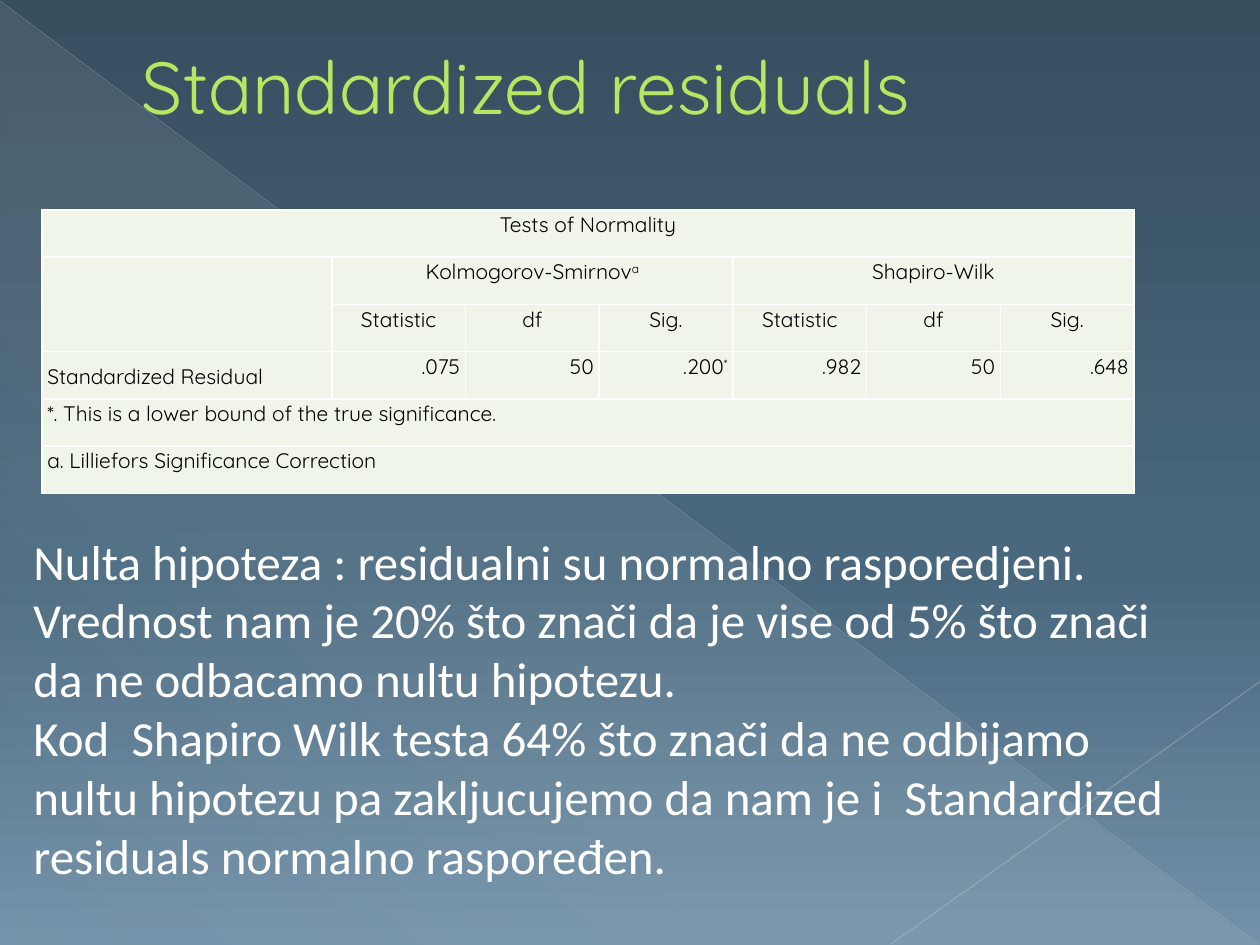
import pptx
import pptx.dml.color
import pptx.enum.shapes
import pptx.enum.text
import pptx.oxml
import pptx.oxml.ns
import pptx.util
from lxml import etree

Pt = pptx.util.Pt
ALIGN = pptx.enum.text.PP_ALIGN
ANCHOR = pptx.enum.text.MSO_ANCHOR
qn = pptx.oxml.ns.qn

COLORS = {
    "sky_top": "374E5F", "sky_middle": "49687E", "sky_bottom": "7291A8",
    "sheen": "E7ECED", "long_line": "BAC0C6", "short_line": "C2C7CC",
    "title": "B4E862", "title_edge": "698A18", "body": "FFFFFF",
    "cell": "EFF5E8", "border": "FFFFFF", "cell_text": "000000",
}
LEFT, CENTER, RIGHT = ALIGN.LEFT, ALIGN.CENTER, ALIGN.RIGHT

# Row, column, rows spanned, columns spanned, alignment, text, superscript
HEADINGS = ["Statistic", "df", "Sig."] * 2
RESULTS = [(".075", ""), ("50", ""), (".200", "*"),
           (".982", ""), ("50", ""), (".648", "")]
NORMALITY_CELLS = [
    (0, 0, 1, 7, CENTER, "Tests of Normality", ""),
    (1, 0, 2, 1, LEFT, "", ""),
    (1, 1, 1, 3, CENTER, "Kolmogorov-Smirnov", "a"),
    (1, 4, 1, 3, CENTER, "Shapiro-Wilk", ""),
    *[(2, col, 1, 1, CENTER, text, "") for col, text in enumerate(HEADINGS, 1)],
    (3, 0, 1, 1, LEFT, "Standardized Residual", ""),
    *[(3, col, 1, 1, RIGHT, *result) for col, result in enumerate(RESULTS, 1)],
    (4, 0, 1, 7, LEFT, "*. This is a lower bound of the true significance.", ""),
    (5, 0, 1, 7, LEFT, "a. Lilliefors Significance Correction", ""),
]
CONCLUSIONS = [
    "Nulta hipoteza : residualni su normalno rasporedjeni.",
    "Vrednost nam je 20% što znači da je vise od 5% što znači "
    "da ne odbacamo nultu hipotezu.",
    "Kod  Shapiro Wilk testa 64% što znači da ne odbijamo nultu hipotezu "
    "pa zakljucujemo da nam je i  Standardized residuals normalno raspoređen.",
]


def rgb(name):
    return pptx.dml.color.RGBColor.from_string(COLORS[name])


def color_fill(parent, name, opacity=100):
    color = etree.SubElement(parent, qn("a:srgbClr"), val=COLORS[name])
    if opacity < 100:
        etree.SubElement(color, qn("a:alpha"), val=str(opacity * 1000))


def solid_line(parent, tag, name, width):
    line = etree.SubElement(parent, qn(tag), w=str(Pt(width)))
    color_fill(etree.SubElement(line, qn("a:solidFill")), name)
    return line


def set_gradient(fill, owner, stops, angle):
    """Swap the owner's solid fill for a linear gradient."""
    fill.solid()
    solid = next(owner.iter(qn("a:solidFill")))
    gradient = etree.Element(qn("a:gradFill"), rotWithShape="1")
    stop_list = etree.SubElement(gradient, qn("a:gsLst"))
    for position, name, opacity in stops:
        stop = etree.SubElement(stop_list, qn("a:gs"), pos=str(position * 1000))
        color_fill(stop, name, opacity)
    etree.SubElement(gradient, qn("a:lin"), ang=str(angle * 60000), scaled="0")
    solid.getparent().replace(solid, gradient)


def style_run(run, font, size, color):
    run.font.name = font
    run.font.size = Pt(size)
    run.font.color.rgb = rgb(color)


def add_line(slide, start, end, color, width, opacity):
    line = slide.shapes.add_connector(
        pptx.enum.shapes.MSO_CONNECTOR.STRAIGHT, *map(Pt, start + end))
    line.line.width = Pt(width)
    line.line.color.rgb = rgb(color)
    properties = line._element.spPr
    tint = next(properties.iter(qn("a:srgbClr")))
    etree.SubElement(tint, qn("a:alpha"), val=str(opacity * 1000))
    etree.SubElement(properties, qn("a:effectLst"))


def add_text(slide, box, paragraphs, font, size, color):
    frame = slide.shapes.add_textbox(*map(Pt, box)).text_frame
    frame.word_wrap = True
    frame.text = "\n".join(paragraphs)
    for paragraph in frame.paragraphs:
        style_run(paragraph.runs[0], font, size, color)
    return frame


def add_backdrop(slide):
    set_gradient(slide.background.fill, slide._element.cSld,
                 [(0, "sky_top", 100), (60, "sky_middle", 100),
                  (100, "sky_bottom", 100)], 90)
    sheen = slide.shapes.add_shape(
        pptx.enum.shapes.MSO_SHAPE.RIGHT_TRIANGLE,
        Pt(0.5), Pt(1), Pt(719), Pt(539))
    sheen.shadow.inherit = False
    sheen.line.fill.background()
    set_gradient(sheen.fill, sheen._element.spPr,
                 [(0, "sheen", 10), (70, "sheen", 8), (100, "sheen", 1)], 133)
    add_line(slide, (0, 0.5), (719.5, 539.5), "long_line", 0.39, 35)
    add_line(slide, (720, 389.5), (509, 539.5), "short_line", 0.47, 45)


def add_title(slide):
    frame = add_text(slide, (36, 21, 648, 110), ["Standardized residuals"],
                     "Quicksand", 42, "title")
    frame.margin_top = Pt(2.5)
    title = frame.paragraphs[0]
    title._p.get_or_add_pPr().set("marL", str(Pt(38)))
    properties = title.runs[0]._r.get_or_add_rPr()
    properties.insert(0, solid_line(properties, "a:ln", "title_edge", 0.5))


def format_cell(cell):
    cell.margin_left = cell.margin_right = 0
    cell.margin_top = cell.margin_bottom = 0
    properties = cell._tc.get_or_add_tcPr()
    for side in ("a:lnL", "a:lnR", "a:lnT", "a:lnB"):
        solid_line(properties, side, "border", 1)
    cell.fill.solid()
    cell.fill.fore_color.rgb = rgb("cell")


def write_cell(cell, align, text, superscript):
    paragraph = cell.text_frame.paragraphs[0]
    paragraph.alignment = align
    paragraph.line_spacing = Pt(16)
    indents = paragraph._p.get_or_add_pPr()
    for side in ("marL", "marR"):
        indents.set(side, str(Pt(3)))
    for part in filter(None, (text, superscript)):
        run = paragraph.add_run()
        run.text = part
        style_run(run, "Quicksand", 12, "cell_text")
    if superscript:
        run._r.get_or_add_rPr().set("baseline", "30000")


def add_normality_table(slide):
    table = slide.shapes.add_table(6, 7, Pt(24), Pt(120), Pt(624), Pt(162)).table
    table.first_row = table.horz_banding = False
    for index, column in enumerate(table.columns):
        column.width = Pt(76.4 if index else 165.6)
    for row in table.rows:
        row.height = Pt(27)
    for cell in table.iter_cells():
        format_cell(cell)
    for row, col, rows, cols, align, text, superscript in NORMALITY_CELLS:
        cell = table.cell(row, col)
        if rows * cols > 1:
            cell.merge(table.cell(row + rows - 1, col + cols - 1))
        write_cell(cell, align, text, superscript)
    table.cell(3, 0).vertical_anchor = ANCHOR.MIDDLE


def main():
    deck = pptx.Presentation()
    deck.slide_width, deck.slide_height = Pt(720), Pt(540)
    slide = deck.slides.add_slide(deck.slide_layouts[6])
    add_backdrop(slide)
    add_title(slide)
    # Conclusions below the table
    add_text(slide, (12, 300, 672, 211), CONCLUSIONS, "Calibri", 28, "body")
    add_normality_table(slide)
    deck.save("out.pptx")


if __name__ == "__main__":
    main()
